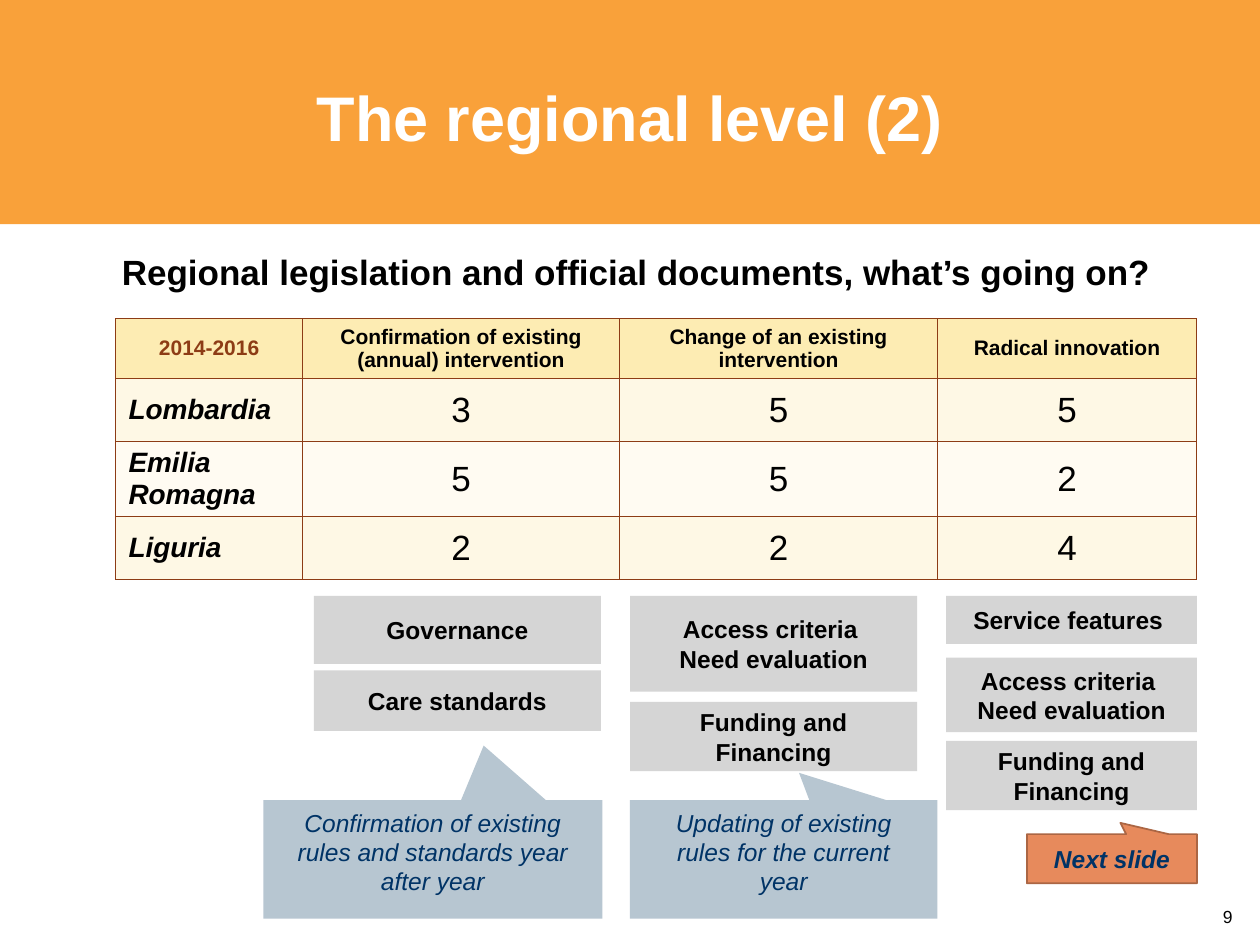
"""Build the slide on regional legislation, with its table, theme boxes and callouts."""
from dataclasses import dataclass

from pptx import Presentation
from pptx import util as u
from pptx.dml.color import RGBColor
from pptx.enum import shapes, text
from pptx.oxml import parse_xml
from pptx.oxml.ns import nsdecls


@dataclass(frozen=True)
class Theme:
    font: str = "Arial"
    black: str = "000000"
    white: str = "FFFFFF"
    navy: str = "003366"
    brown: str = "8D3C15"
    band: str = "F9A13A"
    header: str = "FDECB3"
    stripes: tuple = ("FEF8E5", "FFFBF2")
    grey: str = "D5D5D5"
    blue: str = "B7C6D1"
    orange: str = "E78A5C"
    edge: str = "AB6644"
    title: int = 36
    heading: int = 20
    region: int = 16
    label: int = 14
    small: int = 12
    number: int = 10


THEME = Theme()
ALIGN = text.PP_ALIGN
MIDDLE = text.MSO_ANCHOR.MIDDLE

TITLE = "The regional level (2)"
HEADING = "Regional legislation and official documents, what’s going on? "
PAGE_NUMBER = "9"
HEADERS = ["2014-2016", "Confirmation of existing (annual) intervention",
           "Change of an existing intervention", "Radical innovation"]
REGIONS = [("Lombardia", 3, 5, 5), ("Emilia Romagna", 5, 5, 2), ("Liguria", 2, 2, 4)]
COLUMN_WIDTHS = [1.48, 2.52, 2.52, 2.06]
ROW_HEIGHTS = [0.47, 0.5, 0.59, 0.5]
TABLE_LEFT, TABLE_TOP = 0.92, 2.53

CRITERIA = "Access criteria \nNeed evaluation"
FUNDING = "Funding and Financing"
TOPICS = [
    (2.49, 2.28, [("Governance", 4.73, 0.54), ("Care standards", 5.32, 0.48)]),
    (5, 2.28, [(CRITERIA, 4.73, 0.76), (FUNDING, 5.57, 0.55)]),
    (7.51, 1.99, [("Service features ", 4.73, 0.38), (CRITERIA, 5.22, 0.59),
                  (FUNDING, 5.88, 0.55)]),
]
CALLOUTS = [
    dict(words="Confirmation of existing rules and standards year after year",
         place=(2.09, 6.35, 2.69, 0.94), tip=(0.15, -0.96), fill=THEME.blue),
    dict(words="Updating of existing rules for the current year",
         place=(5, 6.35, 2.44, 0.94), tip=(0.05, -0.73), fill=THEME.blue),
    dict(words="Next slide", place=(8.15, 6.62, 1.35, 0.39), tip=(0.05, -0.73),
         fill=THEME.orange, line=THEME.edge, bold=True, top=0.2),
]


def write(frame, words, size, color=THEME.black, bold=False, italic=False,
          align=ALIGN.CENTER, anchor=None, insets=None, wrap=True):
    frame.word_wrap = wrap
    if anchor is not None:
        frame.vertical_anchor = anchor
    if insets:
        (frame.margin_left, frame.margin_top,
         frame.margin_right, frame.margin_bottom) = map(u.Inches, insets)
    for index, line in enumerate(words.split("\n")):
        para = frame.add_paragraph() if index else frame.paragraphs[0]
        para.alignment = align
        span = para.add_run()
        span.text = line
        span.font.name = THEME.font
        span.font.size = u.Pt(size)
        span.font.bold = bold
        span.font.italic = italic
        span.font.color.rgb = RGBColor.from_string(color)


def add_box(page, place, fill, line=None, kind=shapes.MSO_SHAPE.RECTANGLE):
    box = page.shapes.add_shape(kind, *map(u.Inches, place))
    box.shadow.inherit = False
    box.fill.solid()
    box.fill.fore_color.rgb = RGBColor.from_string(fill)
    if line:
        box.line.color.rgb = RGBColor.from_string(line)
        box.line.width = u.Pt(1)
    else:
        box.line.fill.background()
    return box


def add_label(page, place, words, size, **style):
    box = page.shapes.add_textbox(*map(u.Inches, place))
    write(box.text_frame, words, size, **style)


def format_cell(cell, words, fill, size, **style):
    properties = cell._tc.get_or_add_tcPr()
    for side in ("lnL", "lnR", "lnT", "lnB"):
        properties.append(parse_xml(
            f'<a:{side} {nsdecls("a")} w="{u.Pt(0.75)}"><a:solidFill>'
            f'<a:srgbClr val="{THEME.brown}"/></a:solidFill></a:{side}>'))
    cell.fill.solid()
    cell.fill.fore_color.rgb = RGBColor.from_string(fill)
    cell.vertical_anchor = MIDDLE
    write(cell.text_frame, words, size, **style)


def add_region_table(page):
    place = (TABLE_LEFT, TABLE_TOP, sum(COLUMN_WIDTHS), sum(ROW_HEIGHTS))
    table = page.shapes.add_table(len(ROW_HEIGHTS), len(COLUMN_WIDTHS),
                                  *map(u.Inches, place)).table
    for column, width in zip(table.columns, COLUMN_WIDTHS):
        column.width = u.Inches(width)
    for row, height in zip(table.rows, ROW_HEIGHTS):
        row.height = u.Inches(height)
    for column, words in enumerate(HEADERS):
        format_cell(table.cell(0, column), words, THEME.header, THEME.small, bold=True,
                    color=THEME.black if column else THEME.brown)
    for row, (region, *counts) in enumerate(REGIONS, 1):
        fill = THEME.stripes[(row - 1) % 2]
        format_cell(table.cell(row, 0), region, fill, THEME.region,
                    bold=True, italic=True, align=ALIGN.LEFT)
        for column, count in enumerate(counts, 1):
            format_cell(table.cell(row, column), str(count), fill, THEME.heading)


def add_callout(page, words, place, tip, fill, line=None, bold=False, top=0.08):
    box = add_box(page, place, fill, line, shapes.MSO_SHAPE.RECTANGULAR_CALLOUT)
    box.adjustments[0], box.adjustments[1] = tip
    write(box.text_frame, words, THEME.label, color=THEME.navy, bold=bold, italic=True,
          anchor=MIDDLE, insets=(0.2, top, 0.2, 0.2))


def main():
    deck = Presentation()
    deck.slide_width, deck.slide_height = u.Inches(10), u.Inches(7.5)
    page = deck.slides.add_slide(deck.slide_layouts[5])

    band = add_box(page, (0, 0, 10, 1.78), THEME.band)
    title = page.shapes.title
    title._element.addprevious(band._element)
    title.left, title.top, title.width, title.height = map(u.Inches, (0.5, 0.3, 9, 1.25))
    write(title.text_frame, TITLE, THEME.title, color=THEME.white, bold=True, anchor=MIDDLE)

    add_region_table(page)
    add_label(page, (0.83, 1.94, 8.52, 0.44), HEADING, THEME.heading, bold=True, wrap=False)
    for left, width, topics in TOPICS:
        for words, top, height in topics:
            box = add_box(page, (left, top, width, height), THEME.grey)
            write(box.text_frame, words, THEME.label, bold=True, anchor=MIDDLE,
                  insets=(0.08, 0, 0.08, 0))
    for callout in CALLOUTS:
        add_callout(page, **callout)
    add_label(page, (8.44, 7.14, 1.44, 0.24), PAGE_NUMBER, THEME.number, align=ALIGN.RIGHT)
    deck.save("out.pptx")


if __name__ == "__main__":
    main()
